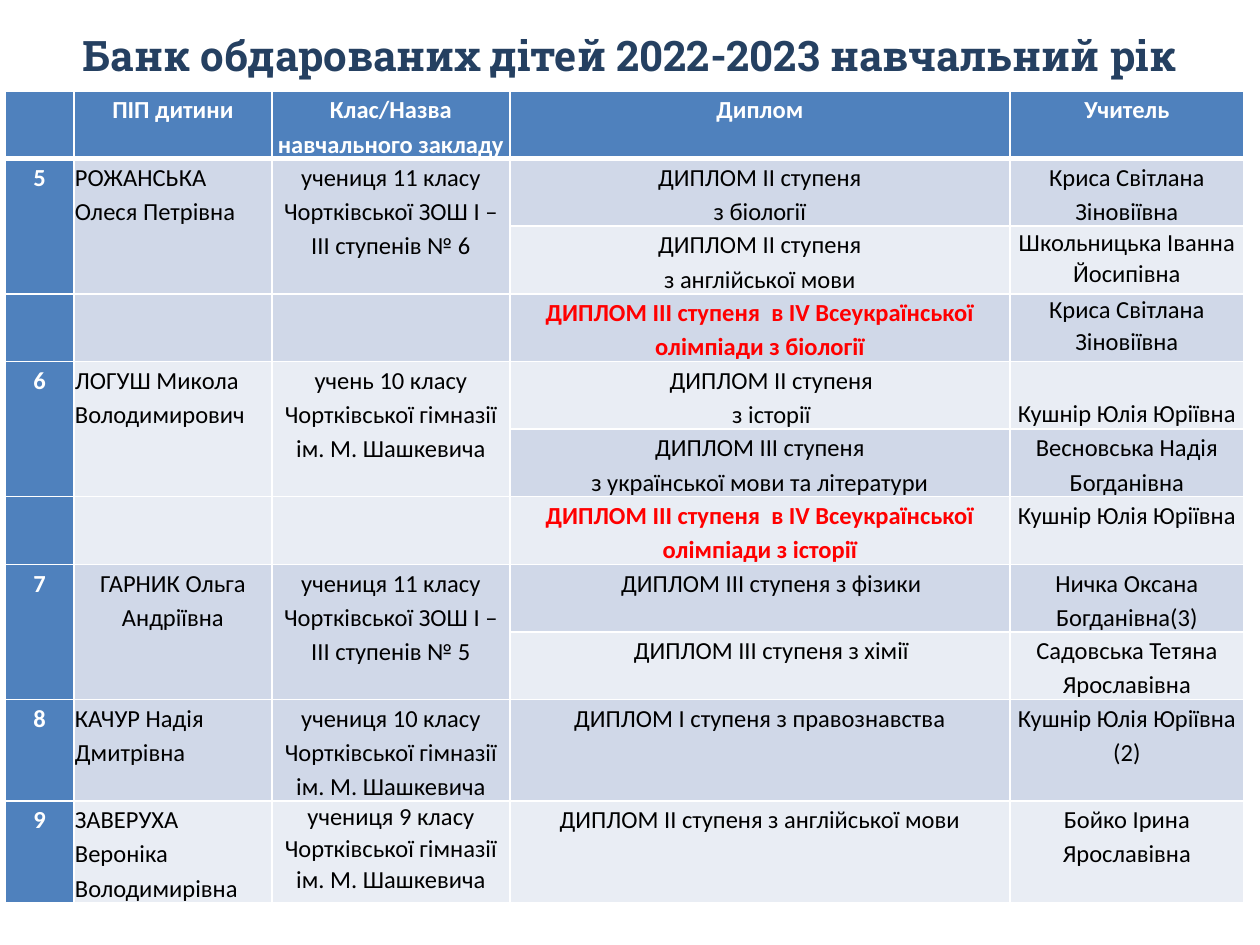
"""Builds the slide listing gifted pupils, their diplomas and teachers."""
from dataclasses import dataclass
from typing import Optional, Union

from lxml import etree
from pptx import Presentation
from pptx import util as u
from pptx.dml.color import RGBColor
from pptx.enum import text
from pptx.oxml import ns

SCALE = 914400 / 126
COLUMN_WIDTHS = (69, 198, 238, 500, 234)
ROW_HEIGHTS = (67,) * 9 + (101,) * 2
CENTER, LEFT = text.PP_ALIGN.CENTER, text.PP_ALIGN.LEFT
TOP, BOTTOM = text.MSO_ANCHOR.TOP, text.MSO_ANCHOR.BOTTOM


@dataclass(frozen=True)
class Theme:
    title_font: str = "Roboto Slab"
    body_font: str = "Calibri"
    title_size: int = 24
    body_size: int = 14
    title: str = "254061"
    header: str = "4F81BD"
    bands: tuple[str, str] = ("E9EDF4", "D0D8E8")
    white: str = "FFFFFF"
    black: str = "000000"
    award: str = "FF0000"
    thin_border: int = 1
    thick_border: int = 3


THEME = Theme()


@dataclass(frozen=True)
class Entry:
    content: str = ""
    color: str = THEME.black
    bold: bool = False
    align: text.PP_ALIGN = CENTER
    anchor: text.MSO_ANCHOR = TOP
    spacing: Union[float, u.Pt] = 1.15
    indent: int = 0


@dataclass(frozen=True)
class Award:
    diploma: Entry
    teacher: Entry


@dataclass(frozen=True)
class Pupil:
    number: str
    name: Entry
    school: Entry
    awards: tuple[Award, ...]
    olympiad: Optional[Award] = None


def heading(content: str) -> Entry:
    """Returns a white bold entry."""
    return Entry(content, color=THEME.white, bold=True)


def name(content: str) -> Entry:
    """Returns a left-aligned pupil name."""
    return Entry(content, align=LEFT)


def olympiad(subject: str, teacher: Entry) -> Award:
    """Returns a highlighted award of the national stage."""
    content = f"ДИПЛОМ ІІІ ступеня  в ІV Всеукраїнської олімпіади з {subject}"
    return Award(Entry(content, color=THEME.award, bold=True), teacher)


HEADINGS = ("", "ПІП дитини", "Клас/Назва навчального закладу", "Диплом", "Учитель")
PUPILS = (
    Pupil(
        "5", name("РОЖАНСЬКА Олеся Петрівна"),
        Entry("учениця 11 класу Чортківської ЗОШ І – ІІІ ступенів № 6"),
        (
            Award(Entry("ДИПЛОМ ІІ ступеня\nз біології"), Entry("Криса Світлана Зіновіївна")),
            Award(Entry("ДИПЛОМ ІІ ступеня\nз англійської мови"),
                  Entry("Школьницька Іванна Йосипівна", spacing=1.06)),
        ),
        olympiad("біології", Entry("Криса Світлана Зіновіївна", spacing=1.06)),
    ),
    Pupil(
        "6", name("ЛОГУШ Микола Володимирович"),
        Entry("учень 10 класу Чортківської гімназії ім. М. Шашкевича"),
        (
            Award(Entry("ДИПЛОМ ІІ ступеня\nз історії", indent=23),
                  Entry("Кушнір Юлія Юріївна", anchor=BOTTOM)),
            Award(Entry("ДИПЛОМ ІІІ ступеня\nз української мови та літератури"),
                  Entry("Весновська Надія Богданівна")),
        ),
        olympiad("історії", Entry("Кушнір Юлія Юріївна")),
    ),
    Pupil(
        "7", Entry("ГАРНИК Ольга Андріївна"),
        Entry("учениця 11 класу Чортківської ЗОШ І – ІІІ ступенів № 5"),
        (
            Award(Entry("ДИПЛОМ ІІІ ступеня з фізики", indent=23),
                  Entry("Ничка Оксана Богданівна(3)")),
            Award(Entry("ДИПЛОМ ІІІ ступеня з хімії", indent=23),
                  Entry("Садовська Тетяна Ярославівна")),
        ),
    ),
    Pupil(
        "8", name("КАЧУР Надія Дмитрівна"),
        Entry("учениця 10 класу Чортківської гімназії ім. М. Шашкевича"),
        (Award(Entry("ДИПЛОМ І ступеня з правознавства"), Entry("Кушнір Юлія Юріївна (2)")),),
    ),
    Pupil(
        "9", name("ЗАВЕРУХА Вероніка Володимирівна"),
        Entry("учениця 9 класу Чортківської гімназії ім. М. Шашкевича", spacing=u.Pt(18)),
        (Award(Entry("ДИПЛОМ ІІ ступеня з англійської мови"), Entry("Бойко Ірина Ярославівна")),),
    ),
)


def px(length: int) -> u.Emu:
    """Turns pixels into EMU."""
    return u.Emu(round(length * SCALE))


def write(frame, content: str, *, font: str, size: int, color: str, bold: bool = False,
          align=CENTER, spacing=1.0, indent: int = 0) -> None:
    """Writes one paragraph per line of content."""
    frame.word_wrap = True
    for index, line in enumerate(content.split("\n")):
        paragraph = frame.add_paragraph() if index else frame.paragraphs[0]
        paragraph.alignment, paragraph.line_spacing = align, spacing
        if indent:
            paragraph._p.get_or_add_pPr().set("marL", str(px(indent)))
        run = paragraph.add_run()
        run.text = line
        run.font.name, run.font.size, run.font.bold = font, u.Pt(size), bold
        run.font.color.rgb = RGBColor.from_string(color)


def style_cell(cell, row: int, column: int) -> None:
    """Sets the margins, borders and fill of a cell."""
    cell.margin_left = cell.margin_right = px(1)
    cell.margin_top = cell.margin_bottom = 0
    properties = cell._tc.get_or_add_tcPr()
    for side in "LRTB":
        thick = (row, side) in ((0, "B"), (1, "T"))
        width = u.Pt(THEME.thick_border if thick else THEME.thin_border)
        line = etree.SubElement(properties, ns.qn(f"a:ln{side}"), w=str(width))
        fill = etree.SubElement(line, ns.qn("a:solidFill"))
        etree.SubElement(fill, ns.qn("a:srgbClr"), val=THEME.white)
    color = THEME.header if row == 0 or column == 0 else THEME.bands[row % 2]
    cell.fill.solid()
    cell.fill.fore_color.rgb = RGBColor.from_string(color)


def put(table, row: int, column: int, entry: Entry) -> None:
    """Puts an entry into a table cell."""
    cell = table.cell(row, column)
    cell.vertical_anchor = entry.anchor
    if entry.content:
        write(cell.text_frame, entry.content, font=THEME.body_font, size=THEME.body_size,
              color=entry.color, bold=entry.bold, align=entry.align,
              spacing=entry.spacing, indent=entry.indent)


def put_pupil(table, top: int, pupil: Pupil) -> int:
    """Fills the rows of one pupil and returns the next free row."""
    bottom = top + len(pupil.awards) - 1
    for column, entry in enumerate((heading(pupil.number), pupil.name, pupil.school)):
        put(table, top, column, entry)
        if bottom > top:
            table.cell(top, column).merge(table.cell(bottom, column))
    awards = pupil.awards + ((pupil.olympiad,) if pupil.olympiad else ())
    for row, award in enumerate(awards, top):
        put(table, row, 3, award.diploma)
        put(table, row, 4, award.teacher)
    return top + len(awards)


def add_pupil_table(slide) -> None:
    """Adds the table of pupils."""
    table = slide.shapes.add_table(
        len(ROW_HEIGHTS), len(COLUMN_WIDTHS), px(5), px(91),
        px(sum(COLUMN_WIDTHS)), px(sum(ROW_HEIGHTS))).table
    table.horz_banding = False
    for column, width in zip(table.columns, COLUMN_WIDTHS):
        column.width = px(width)
    for row_index, height in enumerate(ROW_HEIGHTS):
        table.rows[row_index].height = px(height)
        for column_index in range(len(COLUMN_WIDTHS)):
            style_cell(table.cell(row_index, column_index), row_index, column_index)
    for column_index, content in enumerate(HEADINGS):
        put(table, 0, column_index, heading(content))
    next_row = 1
    for pupil in PUPILS:
        next_row = put_pupil(table, next_row, pupil)


def main() -> None:
    """Builds and saves the presentation."""
    presentation = Presentation()
    presentation.slide_width, presentation.slide_height = px(1260), px(945)
    slide = presentation.slides.add_slide(presentation.slide_layouts[6])
    title = slide.shapes.add_textbox(px(15), px(23), px(1230), px(63))
    write(title.text_frame, "Банк обдарованих дітей 2022-2023 навчальний рік",
          font=THEME.title_font, size=THEME.title_size, color=THEME.title, bold=True)
    add_pupil_table(slide)
    presentation.save("out.pptx")


if __name__ == "__main__":
    main()
